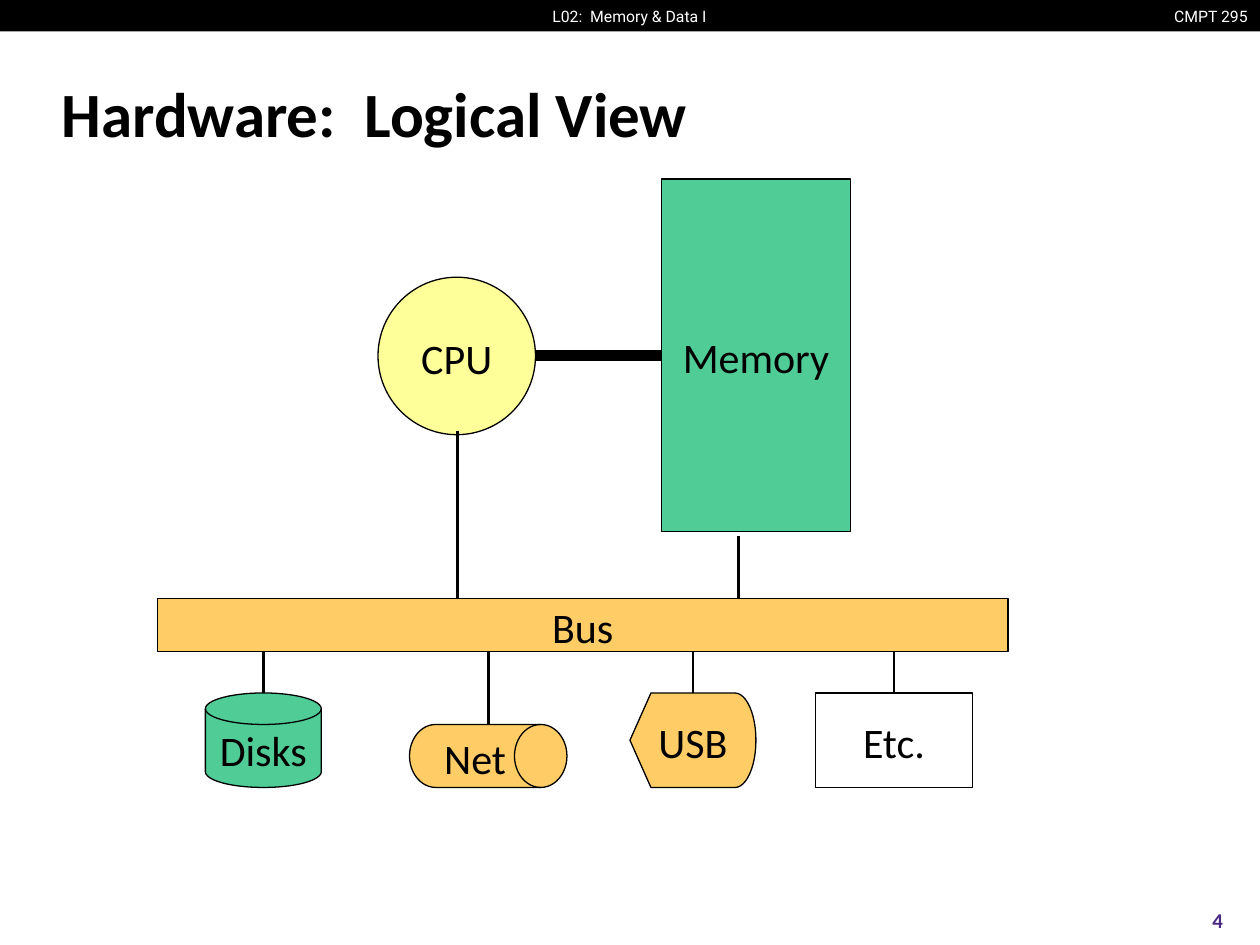
"""Build a slide showing the logical view of computer hardware."""
import pptx
import pptx.util
import pptx.dml.color
import pptx.enum.shapes
import pptx.enum.text
import pptx.oxml.ns
from lxml import etree

Inches, Pt = pptx.util.Inches, pptx.util.Pt
Kind = pptx.enum.shapes.MSO_SHAPE
Align = pptx.enum.text.PP_ALIGN

BLACK, GREEN, YELLOW, ORANGE = "000000", "50CC97", "FFFF99", "FFCC66"
TITLE = "Hardware:  Logical View"
LABELS = [
    ("CMPT 295", (9.19, 0, 0.81, 0.25), Align.RIGHT, 9, "Roboto", "FFFFFF", False),
    ("L02:  Memory & Data I", (4.27, 0, 1.45, 0.25), Align.CENTER, 9, "Roboto", "FFFFFF", False),
    ("4", (9.33, 7.1, 0.67, 0.4), Align.CENTER, 12, "Calibri", "4B2A85", True),
]
CORE = [
    ("CPU", Kind.OVAL, (3, 2.2, 1.25, 1.25), YELLOW),
    ("Memory", Kind.RECTANGLE, (5.25, 1.42, 1.5, 2.8), GREEN),
]
BUS = ("Bus", Kind.RECTANGLE, (1.25, 4.75, 6.75, 0.42), ORANGE)
BASE = 6.25
DEVICES = [
    ("Disks", Kind.FLOWCHART_MAGNETIC_DISK, 1.63, 0.92, 0.75, GREEN),
    ("Net", Kind.FLOWCHART_DIRECT_ACCESS_STORAGE, 3.25, 1.25, 0.5, ORANGE),
    ("USB", Kind.FLOWCHART_DISPLAY, 5, 1, 0.75, ORANGE),
    ("Etc.", Kind.RECTANGLE, 6.47, 1.25, 0.75, None),
]
LINKS = [
    ((4.25, 2.82), (5.25, 2.82), 6),
    ((3.63, 3.42), (3.63, 4.75), 1.5),
    ((5.86, 4.25), (5.86, 4.75), 1.5),
]


def color(code):
    return pptx.dml.color.RGBColor.from_string(code)


def write(frame, text, size, font="Calibri", code=BLACK, bold=False, align=Align.CENTER):
    frame.vertical_anchor = pptx.enum.text.MSO_ANCHOR.MIDDLE
    para = frame.paragraphs[0]
    para.alignment = align
    run = para.add_run()
    run.text = text
    run.font.size, run.font.name, run.font.bold = Pt(size), font, bold
    run.font.color.rgb = color(code)


def block(slide, kind, box, fill, line=True):
    shape = slide.shapes.add_shape(kind, *map(Inches, box))
    shape.shadow.inherit = False
    if fill:
        shape.fill.solid()
        shape.fill.fore_color.rgb = color(fill)
    else:
        shape.fill.background()
    if line:
        shape.line.color.rgb = color(BLACK)
        shape.line.width = Pt(0.75)
    else:
        shape.line.fill.background()
    return shape


def part(slide, text, kind, box, fill):
    frame = block(slide, kind, box, fill).text_frame
    frame.word_wrap = False
    frame.margin_top, frame.margin_bottom = Inches(0.07), Inches(0.05)
    write(frame, text, 24)


def link(slide, start, end, width):
    line = slide.shapes.add_connector(
        pptx.enum.shapes.MSO_CONNECTOR.STRAIGHT, *map(Inches, start + end))
    line.line.color.rgb = color(BLACK)
    line.line.width = Pt(width)
    etree.SubElement(line._element.spPr, pptx.oxml.ns.qn("a:effectLst"))


def main():
    deck = pptx.Presentation()
    deck.slide_width, deck.slide_height = Inches(10), Inches(7.5)
    slide = deck.slides.add_slide(deck.slide_layouts[5])

    title = slide.shapes.title
    title.left, title.top, title.width, title.height = map(Inches, (0.39, 0.48, 9.19, 0.83))
    write(title.text_frame, TITLE, 36, bold=True, align=Align.LEFT)

    block(slide, Kind.RECTANGLE, (0, 0, 10, 0.25), BLACK, line=False)
    for text, box, align, size, font, code, bold in LABELS:
        frame = slide.shapes.add_textbox(*map(Inches, box)).text_frame
        frame.word_wrap = False
        write(frame, text, size, font, code, bold, align)

    for item in CORE:
        part(slide, *item)
    for item in LINKS:
        link(slide, *item)
    for text, kind, left, width, height, fill in DEVICES:
        top, mid = BASE - height, left + width / 2
        part(slide, text, kind, (left, top, width, height), fill)
        link(slide, (mid, top), (mid, 5.08), 1.5)
    part(slide, *BUS)
    deck.save("out.pptx")


if __name__ == "__main__":
    main()
